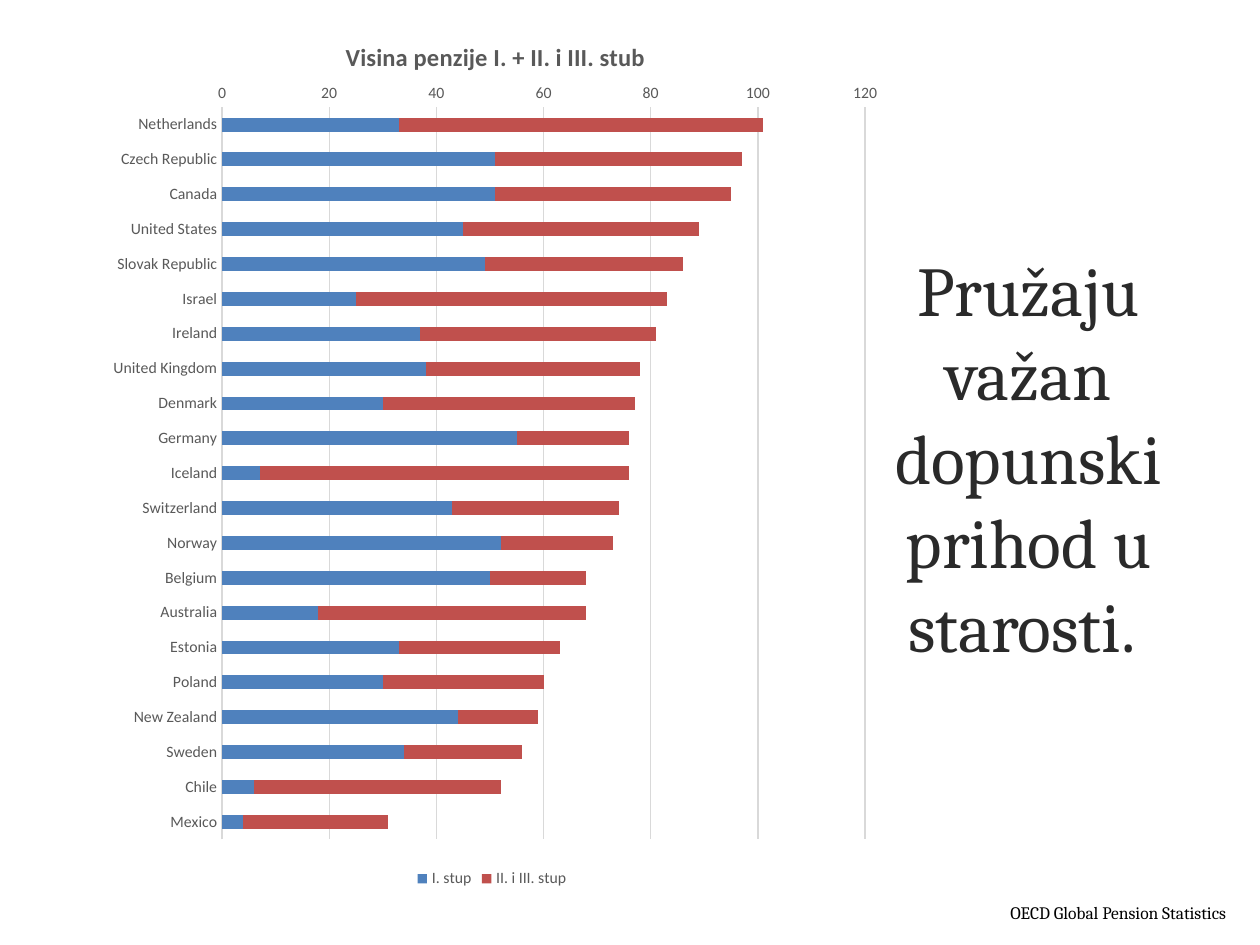
from dataclasses import dataclass

from pptx import Presentation
from pptx.chart.data import CategoryChartData
from pptx.dml.color import RGBColor
from pptx.enum.chart import XL_CHART_TYPE as ChartType
from pptx.enum.chart import XL_LEGEND_POSITION as LegendPosition
from pptx.enum.chart import XL_TICK_MARK as TickMark
from pptx.enum.text import MSO_ANCHOR as Anchor
from pptx.enum.text import MSO_AUTO_SIZE as AutoSize
from pptx.enum.text import PP_ALIGN as Align
from pptx.oxml import parse_xml
from pptx.oxml.ns import nsdecls, qn
from pptx.util import Emu, Pt

EMU_PER_PX = 914400 / 126


@dataclass(frozen=True)
class Theme:
    chart_font: str = "Calibri"
    text_font: str = "Cambria"
    black: str = "000000"
    message: str = "2A2A2A"
    label: str = "595959"
    grid: str = "D9D9D9"
    first_pillar: str = "4F81BD"
    other_pillars: str = "C0504D"
    message_size: int = 40
    title_size: int = 14
    source_size: int = 10
    label_size: int = 9


THEME = Theme()

PENSIONS = [
    ("Netherlands", 33, 68),
    ("Czech Republic", 51, 46),
    ("Canada", 51, 44),
    ("United States", 45, 44),
    ("Slovak Republic", 49, 37),
    ("Israel", 25, 58),
    ("Ireland", 37, 44),
    ("United Kingdom", 38, 40),
    ("Denmark", 30, 47),
    ("Germany", 55, 21),
    ("Iceland", 7, 69),
    ("Switzerland", 43, 31),
    ("Norway", 52, 21),
    ("Belgium", 50, 18),
    ("Australia", 18, 50),
    ("Estonia", 33, 30),
    ("Poland", 30, 30),
    ("New Zealand", 44, 15),
    ("Sweden", 34, 22),
    ("Chile", 6, 46),
    ("Mexico", 4, 27),
]


def px(length):
    return Emu(round(length * EMU_PER_PX))


def style_font(font, name, size, color, bold=False):
    font.name = name
    font.size = Pt(size)
    font.bold = bold
    font.color.rgb = RGBColor.from_string(color)


def style_line(line, color):
    line.color.rgb = RGBColor.from_string(color)
    line.width = Pt(0.75)


def add_text(slide, box, text, size, color):
    shape = slide.shapes.add_textbox(*map(px, box))
    frame = shape.text_frame
    frame.text = text
    frame.word_wrap = True
    paragraph = frame.paragraphs[0]
    style_font(paragraph.runs[0].font, THEME.text_font, size, color)
    return frame, paragraph


def set_layout(parent, position, **fractions):
    settings = {"xMode": "edge", "yMode": "edge", **fractions}
    if "w" in fractions:
        settings = {"layoutTarget": "inner", **settings}
    values = "".join(f'<c:{key} val="{value}"/>' for key, value in settings.items())
    layout = parse_xml(
        f'<c:layout {nsdecls("c")}><c:manualLayout>{values}</c:manualLayout></c:layout>'
    )
    previous = parent.find(qn("c:layout"))
    if previous is not None:
        parent.remove(previous)
    parent.insert(position, layout)


def style_title(chart, text):
    chart.has_title = True
    title = chart.chart_title
    title.include_in_layout = False
    title.text_frame.text = text
    run = title.text_frame.paragraphs[0].runs[0]
    style_font(run.font, THEME.chart_font, THEME.title_size, THEME.label, bold=True)
    set_layout(title.element, 1, x=0.31, y=0.04)


def style_axes(chart):
    for axis in (chart.category_axis, chart.value_axis):
        axis.major_tick_mark = TickMark.NONE
        axis.minor_tick_mark = TickMark.NONE
        style_font(axis.tick_labels.font, THEME.chart_font, THEME.label_size, THEME.label)

    chart.category_axis.reverse_order = True
    style_line(chart.category_axis.format.line, THEME.grid)

    value_axis = chart.value_axis
    value_axis.minimum_scale = 0
    value_axis.maximum_scale = 120
    value_axis.major_unit = 20
    value_axis.format.line.fill.background()
    value_axis.has_major_gridlines = True
    style_line(value_axis.major_gridlines.format.line, THEME.grid)


def add_pension_chart(slide, box):
    countries, first_pillar, other_pillars = zip(*PENSIONS)
    data = CategoryChartData()
    data.categories = countries
    data.add_series("I. stup", first_pillar)
    data.add_series("II. i III. stup", other_pillars)
    chart = slide.shapes.add_chart(ChartType.BAR_STACKED, *map(px, box), data).chart
    style_font(chart.font, THEME.chart_font, THEME.label_size, THEME.label)

    style_title(chart, "Visina penzije I. + II. i III. stub")
    style_axes(chart)
    set_layout(chart.element.find(".//" + qn("c:plotArea")), 0, x=0.16, y=0.12, w=0.81, h=0.82)

    plot = chart.plots[0]
    plot.gap_width = 150
    plot.overlap = 100
    plot.vary_by_categories = False
    for series, color in zip(plot.series, (THEME.first_pillar, THEME.other_pillars)):
        series.format.fill.solid()
        series.format.fill.fore_color.rgb = RGBColor.from_string(color)

    chart.has_legend = True
    chart.legend.position = LegendPosition.BOTTOM
    chart.legend.include_in_layout = False
    style_font(chart.legend.font, THEME.chart_font, THEME.label_size, THEME.label)


def add_message(slide):
    frame, paragraph = add_text(
        slide,
        (825, 204, 407, 506),
        "Pružaju važan dopunski prihod u starosti. ",
        THEME.message_size,
        THEME.message,
    )
    frame.vertical_anchor = Anchor.MIDDLE
    paragraph.alignment = Align.CENTER


def add_source(slide):
    frame, paragraph = add_text(
        slide,
        (998, 898, 300, 31),
        "OECD Global Pension Statistics",
        THEME.source_size,
        THEME.black,
    )
    frame.auto_size = AutoSize.SHAPE_TO_FIT_TEXT
    paragraph.line_spacing = 0.9


def main():
    presentation = Presentation()
    presentation.slide_width = px(1260)
    presentation.slide_height = px(945)
    slide = presentation.slides.add_slide(presentation.slide_layouts[6])
    add_message(slide)
    add_pension_chart(slide, (95, 0, 794, 893))
    add_source(slide)
    presentation.save("out.pptx")


if __name__ == "__main__":
    main()
